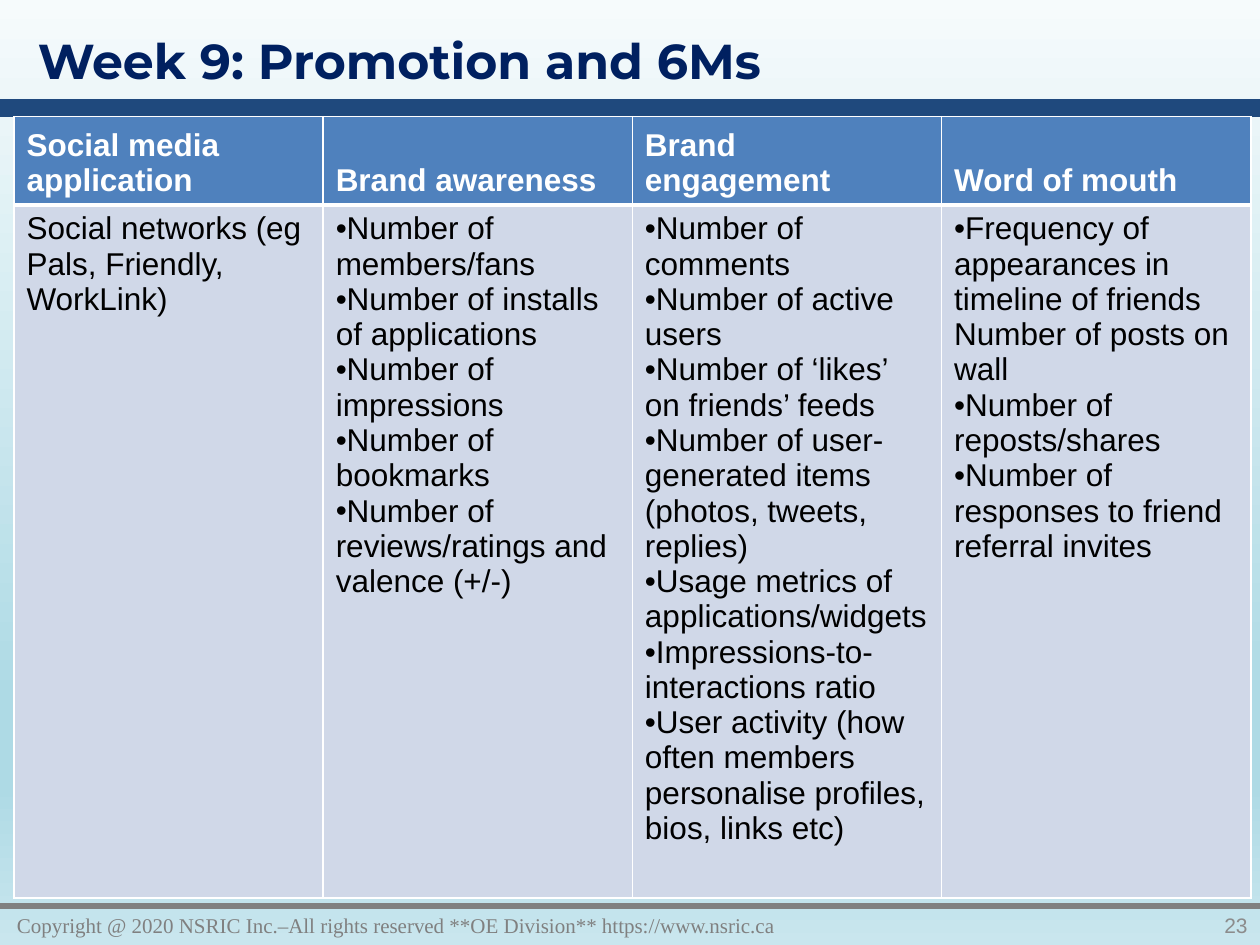
from lxml.etree import SubElement
from pptx import Presentation
from pptx.dml.color import RGBColor
from pptx.enum.shapes import MSO_CONNECTOR as Connector
from pptx.enum.text import MSO_ANCHOR as Anchor, MSO_AUTO_SIZE as AutoSize, PP_ALIGN as Align
from pptx.oxml.ns import qn
from pptx.util import Pt

WIDTH, HEIGHT = 720, 540
NAVY, GREY, WHITE = "002060", "808080", "FFFFFF"
BACKGROUND = [(0, "F6FBFC"), (74, "AEDAE5"), (83, "AEDAE5"), (100, "C9E6EE")]

HEADERS = ["Social media application", "Brand awareness", "Brand engagement", "Word of mouth"]
BULLET = "•"
METRICS = [
    ["Social networks (eg Pals, Friendly, WorkLink)"],
    ["•Number of members/fans",
     "•Number of installs of applications",
     "•Number of impressions",
     "•Number of bookmarks",
     "•Number of reviews/ratings and valence (+/-)"],
    ["•Number of comments",
     "•Number of active users",
     "•Number of ‘likes’ on friends’ feeds",
     "•Number of user-generated items (photos, tweets, replies)",
     "•Usage metrics of applications/widgets",
     "•Impressions-to-interactions ratio",
     "•User activity (how often members personalise profiles, bios, links etc)"],
    ["•Frequency of appearances in timeline of friends",
     "Number of posts on wall",
     "•Number of reposts/shares",
     "•Number of responses to friend referral invites"],
]


def rgb(color):
    return RGBColor.from_string(color)


def set_font(p, name, size, color, bold=False):
    f = p.font
    f.name, f.size, f.bold = name, Pt(size), bold
    f.color.rgb = rgb(color)


def set_background(s, stops):
    fill = s.background.fill
    fill.gradient()
    fill.gradient_angle = 270
    gs_list = next(s.element.iter(qn("a:gsLst")))
    for gs in list(gs_list):
        gs_list.remove(gs)
    for position, color in stops:
        gs = SubElement(gs_list, qn("a:gs"), pos=str(position * 1000))
        SubElement(gs, qn("a:srgbClr"), val=color)


def add_rule(s, y, color, width):
    line = s.shapes.add_connector(Connector.STRAIGHT, Pt(0), Pt(y), Pt(WIDTH), Pt(y))
    line.line.color.rgb = rgb(color)
    line.line.width = Pt(width)
    SubElement(line.element.find(qn("p:spPr")), qn("a:effectLst"))


def add_footer(s, x, w, text, font, color, align=Align.LEFT):
    tf = s.shapes.add_textbox(Pt(x), Pt(517.7), Pt(w), Pt(22.3)).text_frame
    tf.word_wrap = True
    tf.vertical_anchor = Anchor.MIDDLE
    p = tf.paragraphs[0]
    p.text, p.alignment = text, align
    set_font(p, font, 12, color)


def set_title(s, text):
    sp = s.shapes.title
    sp.left, sp.top, sp.width, sp.height = Pt(14.4), Pt(13.7), Pt(630.7), Pt(41)
    tf = sp.text_frame
    tf.text = text
    tf.auto_size = AutoSize.NONE
    tf.vertical_anchor = Anchor.TOP
    p = tf.paragraphs[0]
    p.alignment = Align.LEFT
    set_font(p, "Montserrat", 28, NAVY, bold=True)


def set_borders(cell, **widths):
    tc_pr = cell._tc.get_or_add_tcPr()
    for side in "LRTB":
        ln = SubElement(tc_pr, qn("a:ln" + side), w=str(Pt(widths.get(side, 1))))
        SubElement(SubElement(ln, qn("a:solidFill")), qn("a:srgbClr"), val=WHITE)


def set_bullet(p):
    p_pr = p._p.get_or_add_pPr()
    p_pr.set("marL", "0")
    p_pr.set("indent", "0")
    SubElement(p_pr, qn("a:buFont"), typeface="Arial")
    SubElement(p_pr, qn("a:buChar"), char=BULLET)


def fill_cell(cell, lines, fill, color, bold=False):
    cell.fill.solid()
    cell.fill.fore_color.rgb = rgb(fill)
    tf = cell.text_frame
    for i, line in enumerate(lines):
        p = tf.add_paragraph() if i else tf.paragraphs[0]
        p.text = line.removeprefix(BULLET)
        if line.startswith(BULLET):
            set_bullet(p)
        set_font(p, "Arial", 18, color, bold)


def add_metrics_table(s):
    table = s.shapes.add_table(2, len(HEADERS), Pt(8), Pt(66.7), Pt(706.8), Pt(446)).table
    for row, height in zip(table.rows, (50, 396)):
        row.height = Pt(height)
    for i, (header, metrics) in enumerate(zip(HEADERS, METRICS)):
        table.columns[i].width = Pt(176.7)
        head, body = table.cell(0, i), table.cell(1, i)
        set_borders(head, B=3)
        set_borders(body, T=3)
        head.vertical_anchor = Anchor.BOTTOM
        fill_cell(head, [header], "4F81BD", WHITE, bold=True)
        fill_cell(body, metrics, "D0D8E8", "000000")


def main():
    prs = Presentation()
    prs.slide_width, prs.slide_height = Pt(WIDTH), Pt(HEIGHT)
    s = prs.slides.add_slide(prs.slide_layouts[5])  # Title Only
    set_background(s, BACKGROUND)

    # Rules and footer
    add_rule(s, 61.8, "1F497D", 10)
    add_rule(s, 517.7, GREY, 3)
    add_footer(s, 2.6, 595.4,
               "Copyright @ 2020 NSRIC Inc.–All rights reserved **OE Division** https://www.nsric.ca",
               "Times New Roman", GREY)
    add_footer(s, 618.5, 101.5, "23", "Arial", "8C8C8C", Align.RIGHT)

    # Title and table
    set_title(s, "Week 9: Promotion and 6Ms")
    add_metrics_table(s)
    prs.save("out.pptx")


if __name__ == "__main__":
    main()
